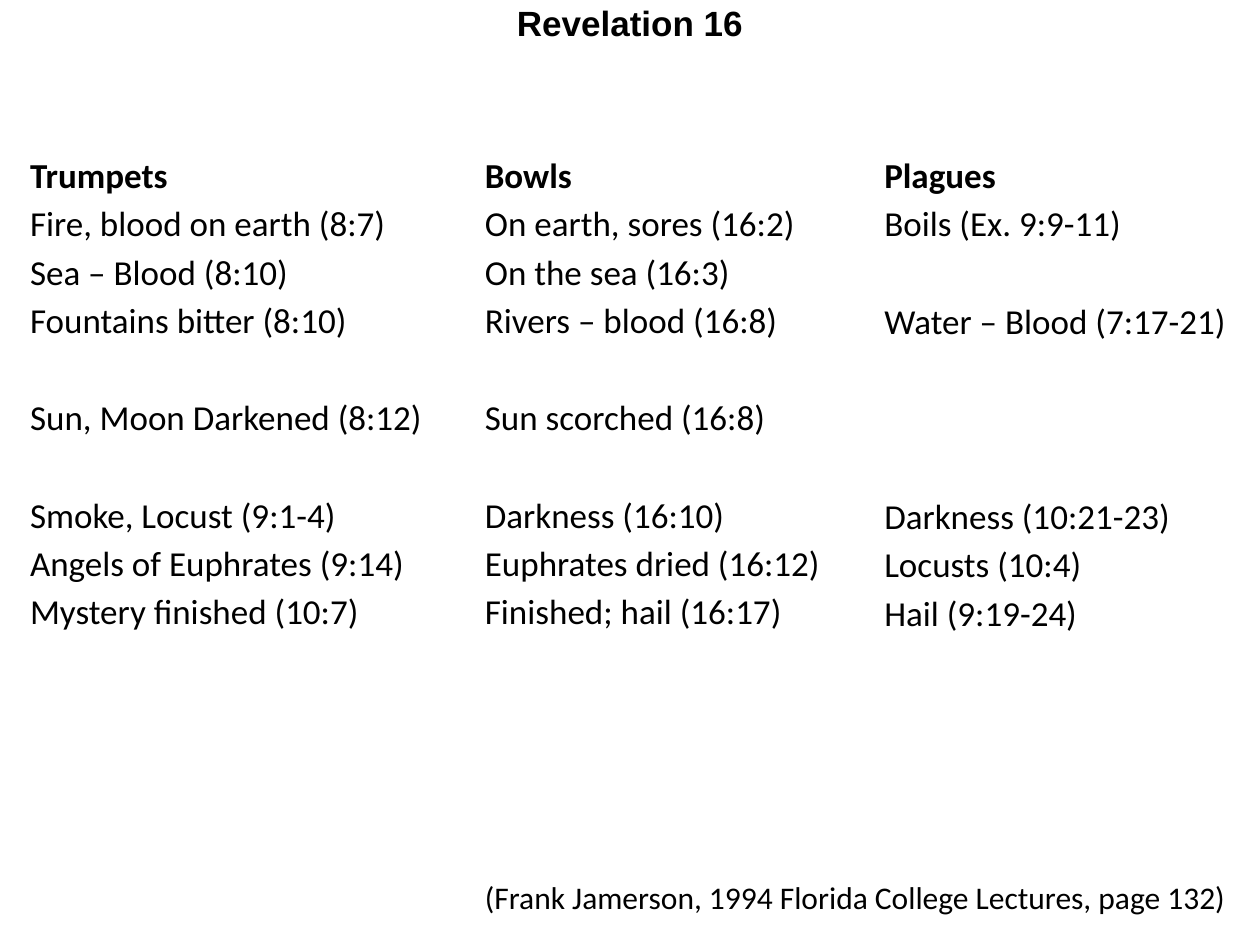
"""Build a slide comparing the trumpets, bowls and plagues of Revelation 16."""
import pptx
import pptx.dml.color
import pptx.enum.text
import pptx.util

COLORS = {"paper": "FFFFFF", "ink": "000000"}
TITLE = "Revelation 16"
CITATION = "(Frank Jamerson, 1994 Florida College Lectures, page 132)"
HEADINGS = ("Trumpets", "Bowls", "Plagues")
PARALLELS = [
    ("Fire, blood on earth (8:7)", "On earth, sores (16:2)", "Boils (Ex. 9:9-11)"),
    ("Sea – Blood (8:10)", "On the sea (16:3)", ""),
    ("Fountains bitter (8:10)", "Rivers – blood (16:8)", "Water – Blood (7:17-21)"),
    ("", "", ""),
    ("Sun, Moon Darkened (8:12)", "Sun scorched (16:8)", ""),
    ("", "", ""),
    ("Smoke, Locust (9:1-4)", "Darkness (16:10)", "Darkness (10:21-23)"),
    ("Angels of Euphrates (9:14)", "Euphrates dried (16:12)", "Locusts (10:4)"),
    ("Mystery finished (10:7)", "Finished; hail (16:17)", "Hail (9:19-24)"),
]
WIDTH, HEIGHT = 10, 7.5
COLUMNS = ((0.14, 3.36), (3.75, 2.93), (6.92, 2.93))
COLUMN_TOP, COLUMN_HEIGHT = 1.17, 4.07
ROW_PITCH, ROW_GAP = 28, 3.6


def add_box(slide, left, top, width, height):
    box = slide.shapes.add_textbox(*map(pptx.util.Inches, (left, top, width, height)))
    box.fill.solid()
    box.fill.fore_color.rgb = pptx.dml.color.RGBColor.from_string(COLORS["paper"])
    box.text_frame.word_wrap = True
    return box.text_frame


def write(paragraph, text, size=20, bold=False, face="Calibri"):
    paragraph.text = text
    font = paragraph.font
    font.name, font.size, font.bold = face, pptx.util.Pt(size), bold
    font.color.rgb = pptx.dml.color.RGBColor.from_string(COLORS["ink"])


def add_column(slide, heading, entries, left, width):
    column = add_box(slide, left, COLUMN_TOP, width, COLUMN_HEIGHT)
    write(column.paragraphs[0], heading, bold=True)
    skipped = 0
    for entry in entries:
        if not entry:
            skipped += 1
            continue
        paragraph = column.add_paragraph()
        write(paragraph, entry)
        paragraph.space_before = pptx.util.Pt(ROW_GAP + skipped * ROW_PITCH)
        skipped = 0


def main():
    deck = pptx.Presentation()
    deck.slide_width = pptx.util.Inches(WIDTH)
    deck.slide_height = pptx.util.Inches(HEIGHT)
    slide = deck.slides.add_slide(deck.slide_layouts[6])

    title = add_box(slide, 0, -0.04, WIDTH, 0.44).paragraphs[0]
    write(title, TITLE, bold=True, face="Arial")
    title.alignment = pptx.enum.text.PP_ALIGN.CENTER

    for heading, entries, (left, width) in zip(HEADINGS, zip(*PARALLELS), COLUMNS):
        add_column(slide, heading, entries, left, width)

    citation = add_box(slide, COLUMNS[1][0], 6.92, 6.09, 0.4)
    write(citation.paragraphs[0], CITATION, size=18)
    deck.save("out.pptx")


if __name__ == "__main__":
    main()
